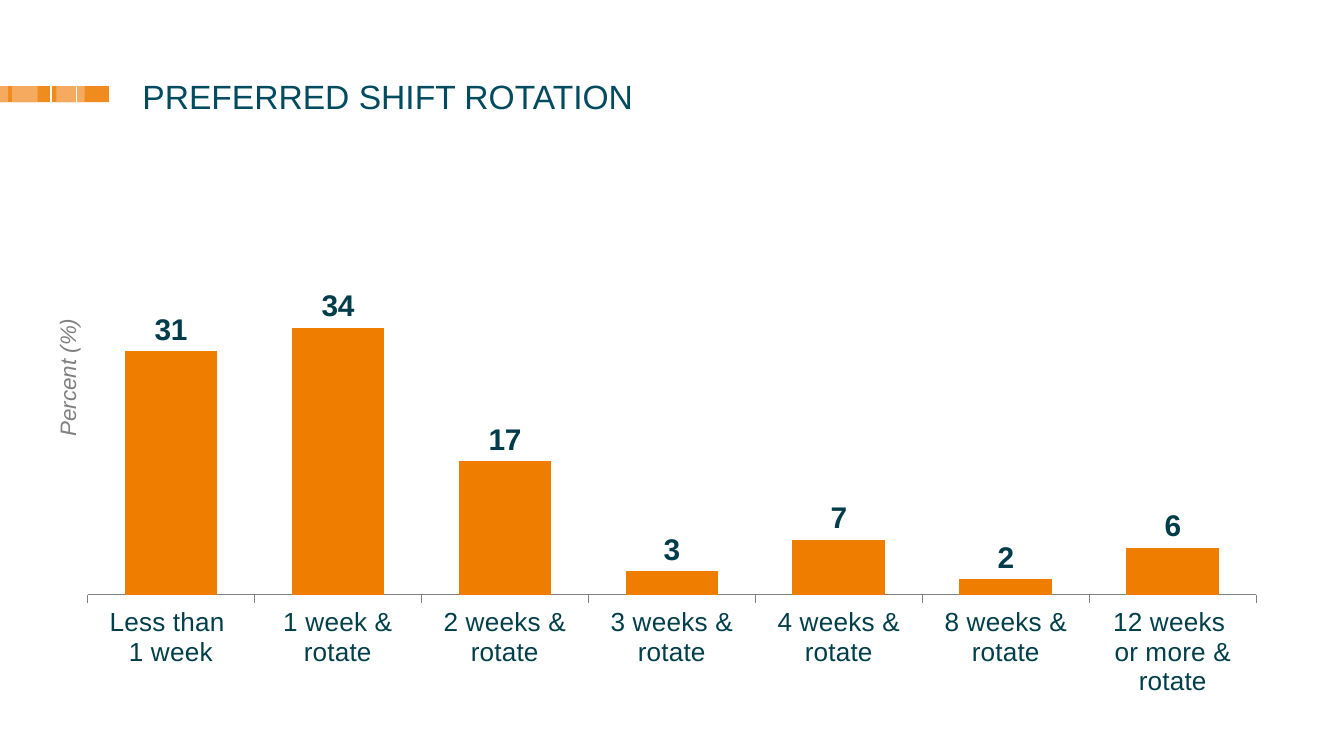
from lxml import etree
from pptx import Presentation
from pptx import util as u
from pptx.chart.data import CategoryChartData
from pptx.dml.color import RGBColor
from pptx.enum import chart as ch, shapes, text
from pptx.oxml import ns

INK = {"title": "004B60", "axis": "003F4A", "label": "003C4C", "bar": "EF7D00",
       "grey": "808080", "band": "F08B1D", "pale": "F6AA5F", "white": "FFFFFF"}
FONT = "Arial"
BAND_TOP, BAND_TALL = 0.64, 0.12
SHIFTS = [("Less than \n1 week", 31), ("1 week & rotate", 34),
          ("2 weeks & rotate", 17), ("3 weeks & rotate", 3),
          ("4 weeks & rotate", 7), ("8 weeks & rotate", 2),
          ("12 weeks \nor more & rotate", 6)]


def tint(name):
    return RGBColor.from_string(INK[name])


def style(font, size, name, bold=False, slant=False):
    font.name, font.size = FONT, u.Pt(size)
    font.bold, font.italic = bold, slant
    font.color.rgb = tint(name)


def place(shape, *box):
    shape.left, shape.top, shape.width, shape.height = map(u.Inches, box)


def write(shape, words, size, name, align, slant=False):
    """Fill a frame without margins with one styled line."""
    frame = shape.text_frame
    frame.text = words
    frame.word_wrap = True
    frame.auto_size = text.MSO_AUTO_SIZE.NONE
    frame.vertical_anchor = text.MSO_ANCHOR.TOP
    frame.margin_left = frame.margin_right = 0
    frame.margin_top = frame.margin_bottom = 0
    para = frame.paragraphs[0]
    para.alignment = align
    para.line_spacing = 0.85
    para.space_after = u.Pt(12)
    style(para.runs[0].font, size, name, slant=slant)


def add_bar(slide, left, width, name):
    bar = slide.shapes.add_shape(
        shapes.MSO_SHAPE.RECTANGLE, u.Inches(left), u.Inches(BAND_TOP),
        u.Inches(width), u.Inches(BAND_TALL))
    bar.shadow.inherit = False
    bar.fill.solid()
    bar.fill.fore_color.rgb = tint(name)
    bar.line.fill.background()


def add_gap(slide, left):
    line = slide.shapes.add_connector(
        shapes.MSO_CONNECTOR.STRAIGHT, u.Inches(left), u.Inches(BAND_TOP),
        u.Inches(left), u.Inches(BAND_TOP + BAND_TALL))
    line.line.color.rgb = tint("white")
    line.line.width = u.Pt(0.63)
    etree.SubElement(line._element.spPr, ns.qn("a:effectLst"))


def add_band(slide):
    add_bar(slide, 0, 0.81, "band")
    for left, width in [(0.42, 0.21), (0.09, 0.19), (0, 0.06)]:
        add_bar(slide, left, width, "pale")
    for left in (0.38, 0.57):
        add_gap(slide, left)


def fix_plot(chart, **parts):
    """Set the inner plot area as fractions of the chart."""
    area = chart._chartSpace.chart.plotArea
    for old in area.findall(ns.qn("c:layout")):
        area.remove(old)
    layout = etree.Element(ns.qn("c:layout"))
    manual = etree.SubElement(layout, ns.qn("c:manualLayout"))
    rules = {"layoutTarget": "inner", "xMode": "edge", "yMode": "edge", **parts}
    for tag, value in rules.items():
        etree.SubElement(manual, ns.qn("c:" + tag)).set("val", str(value))
    area.insert(0, layout)


def add_columns(slide):
    data = CategoryChartData(number_format="0")
    data.categories = [name for name, _ in SHIFTS]
    data.add_series("Series 1", [value for _, value in SHIFTS])
    chart = slide.shapes.add_chart(
        ch.XL_CHART_TYPE.COLUMN_CLUSTERED, u.Inches(0.47), u.Inches(0.83),
        u.Inches(9.06), u.Inches(4.44), data).chart
    chart.has_legend = chart.has_title = False
    style(chart.font, 14, "axis")
    fix_plot(chart, x=0.02, y=0.02, w=0.96, h=0.79)

    scale = chart.value_axis
    scale.minimum_scale, scale.maximum_scale = 0, 60
    scale.major_unit = 40
    scale.has_major_gridlines = False
    scale.visible = False
    base = chart.category_axis
    base.major_tick_mark = ch.XL_TICK_MARK.OUTSIDE
    base.format.line.color.rgb = tint("grey")
    base.format.line.width = u.Pt(0.75)

    plot = chart.plots[0]
    plot.gap_width = 80
    plot.vary_by_categories = False
    fill = plot.series[0].format.fill
    fill.solid()
    fill.fore_color.rgb = tint("bar")
    labels = plot.series[0].data_labels
    labels.show_value = True
    labels.position = ch.XL_LABEL_POSITION.OUTSIDE_END
    labels.number_format, labels.number_format_is_linked = "0", False
    style(labels.font, 16, "label", bold=True)


def add_side(slide):
    """Write the upright caption of the value axis."""
    box = slide.shapes.add_textbox(0, 0, 0, 0)
    place(box, 0.43, 2.24, 0.31, 1.14)
    write(box, "Percent (%)", 12, "grey", text.PP_ALIGN.CENTER, slant=True)
    box.text_frame._txBody.bodyPr.set("vert", "vert270")


def main():
    deck = Presentation()
    deck.slide_width = u.Inches(10)
    deck.slide_height = deck.slide_width * 9 // 16
    slide = deck.slides.add_slide(deck.slide_layouts[5])
    add_band(slide)
    title = slide.shapes.title
    place(title, 1.06, 0.61, 8.67, 0.5)
    write(title, "PREFERRED SHIFT ROTATION", 18, "title", text.PP_ALIGN.LEFT)
    add_columns(slide)
    add_side(slide)
    deck.save("out.pptx")


if __name__ == "__main__":
    main()
